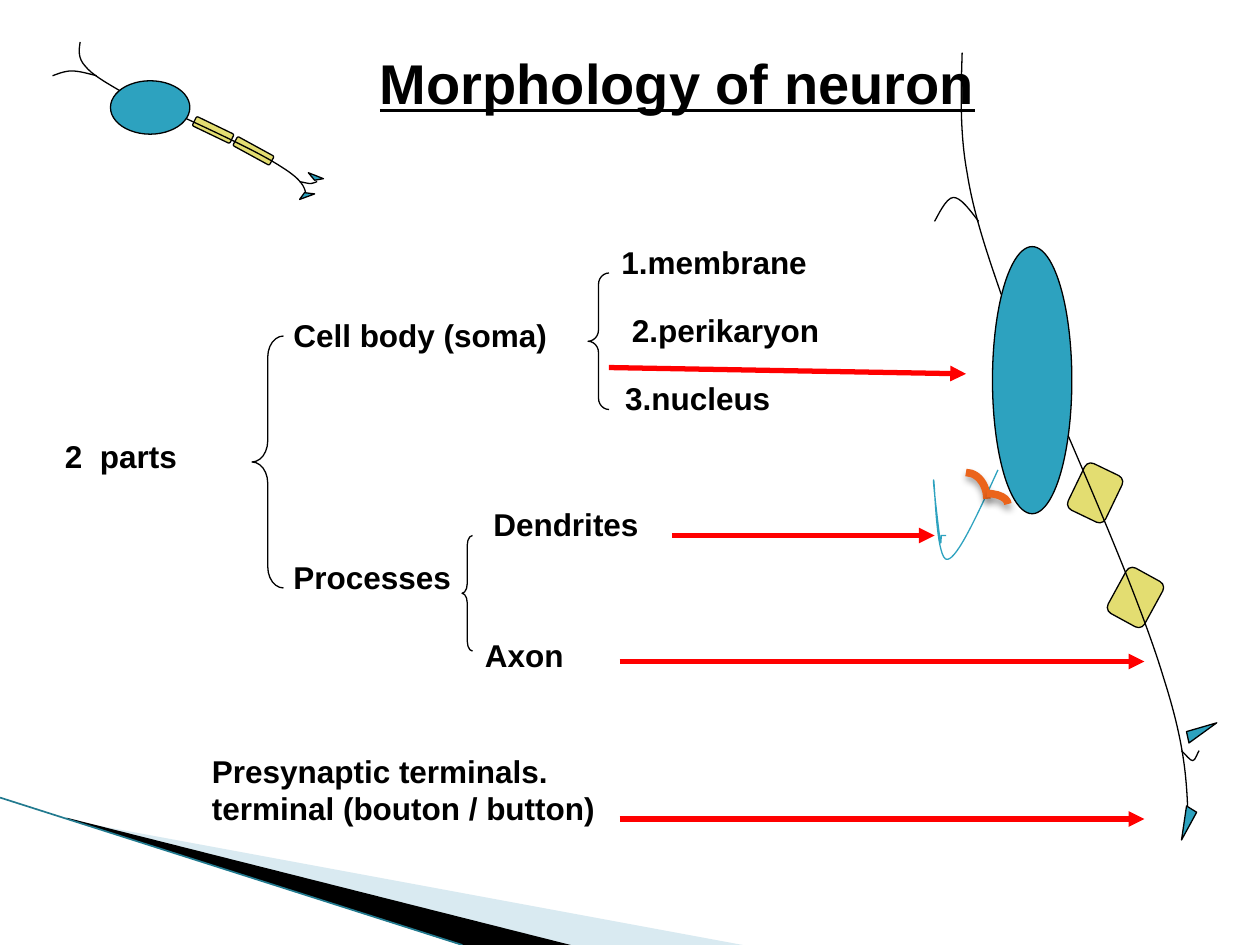
from dataclasses import dataclass

import pptx
import pptx.dml.color
import pptx.enum.shapes
import pptx.enum.text
import pptx.oxml
import pptx.oxml.ns
import pptx.util

COLUMNS, ROWS = 100, 75
CELL = pptx.util.Inches(0.1)
BLACK, RED, TEAL, YELLOW, ORANGE = "000000", "FF0000", "2DA2BF", "E3DD71", "EB641B"
SHAPE = pptx.enum.shapes.MSO_SHAPE
Point = tuple[float, float]


@dataclass
class Label:
    wording: str
    col: float
    row: float
    cols: float
    rows: float = 4
    size: int = 18
    underline: bool = False


@dataclass
class Brace:
    col: float
    row: float
    cols: float
    rows: float
    curl: float


@dataclass
class Arrow:
    start: Point
    end: Point


@dataclass
class Wedge:
    corners: list[Point]
    frame: tuple[float, float, float, float]
    color: str
    alpha: int


@dataclass
class Neuron:
    col: float
    row: float
    stretch: float
    upper_bouton: list[Point]

    def place(self, point: Point) -> Point:
        return self.col + point[0], self.row + point[1] * self.stretch


WEDGES = [
    Wedge([(5.5, 65.1), (59.5, 75.1), (45.6, 75.1), (5.5, 65)], (7.8, 54.7, 41.6, 15.8), "A0CBDC", 40),
    Wedge([(5.3, 64.9), (45.7, 75.1), (37.2, 75.2), (5.4, 65)], (-0.6, 63.3, 41.6, 9.2), BLACK, 100),
]
LABELS = [
    Label("Morphology of neuron", 29.17, 3.37, 50.8, 6.4, 32, True),
    Label("2  parts", 4.17, 34.2, 11),
    Label("Cell body (soma)", 22.3, 24.6, 22.6),
    Label("Processes", 22.3, 43.8, 14.6),
    Label("Dendrites", 38.17, 39.6, 13.9),
    Label("Axon", 37.5, 50, 8.4),
    Label("1.membrane", 48.33, 18.8, 17.6),
    Label("2.perikaryon", 49.17, 24.2, 17.5),
    Label("3.nucleus", 48.63, 29.6, 13.8),
    Label("Presynaptic terminals.\nterminal (bouton / button)", 15.83, 59.17, 32.8, 7),
]
BRACES = [
    Brace(20, 26.67, 2.5, 20, 0.67),
    Brace(36.67, 42.5, 0.83, 9.17, 0.92),
    Brace(46.67, 21.67, 1.67, 10.83, 0.54),
]
ARROWS = [
    Arrow((48.33, 29.17), (76.67, 29.67)),
    Arrow((53.33, 42.5), (74.17, 42.5)),
    Arrow((49.17, 52.5), (90.83, 52.5)),
    Arrow((49.17, 65), (90.83, 65)),
]
NEURONS = [
    Neuron(74.17, 4.17, 1, [(20.2, 54.8), (22.4, 53.2), (20, 53.9)]),
    Neuron(4.17, 3.33, 0.2, [(20.8, 54.9), (21.5, 54.3), (20.3, 51.9)]),
]
SHEATHS = [(11.1, 32.9, 25.7), (14.3, 41.2, 28.7)]
FIBRES = [
    [(5.3, 19.2), (4.2, 16), (3.1, 12.8), (2.6, 9.6), (2, 6.4), (2.1, 3.2), (2.2, 0)],
    [(3.5, 13.4), (2.8, 12.5), (2.1, 11.5), (1.5, 11.5), (0.9, 11.5), (0.2, 13.1), (0, 13.4)],
    [(10.6, 30.4), (13.7, 37.6), (16.7, 44.7), (18.2, 49.7), (19.8, 54.7), (20, 57.5), (20.1, 60.3)],
    [(19.6, 55.4), (20, 55.8), (20.3, 56.2), (20.5, 56.2), (20.7, 56.2), (20.9, 55.5), (21, 55.4)],
]
LOWER_BOUTON = [(20, 59.8), (19.6, 62.5), (20.8, 60.3)]
DENDRITE_LOOP = [
    (79.2, 37.3), (77.6, 40.8), (76, 44.3), (75.2, 44.4), (74.3, 44.6), (74.2, 38.4),
    (74.1, 38.1), (74, 37.9), (74.5, 42.1), (74.6, 42.8), (74.7, 43.6), (74.7, 42.5),
    (74.7, 42.5), (75.1, 42.5),
]


def grid(count: float) -> pptx.util.Emu:
    return pptx.util.Emu(round(count * CELL))


def rgb(value: str) -> pptx.dml.color.RGBColor:
    return pptx.dml.color.RGBColor.from_string(value)


def qn(tag: str) -> str:
    return pptx.oxml.ns.qn(tag)


def element(xml: str):
    return pptx.oxml.parse_xml(xml.replace(" ", f" {pptx.oxml.ns.nsdecls('a')} ", 1))


def paint(shape, fill: str | None, line: str | None, width: float = 0.75) -> None:
    shape.shadow.inherit = False
    if fill:
        shape.fill.solid()
        shape.fill.fore_color.rgb = rgb(fill)
    else:
        shape.fill.background()
    if line:
        shape.line.color.rgb = rgb(line)
        shape.line.width = pptx.util.Pt(width)
    else:
        shape.line.fill.background()


def add_preset(slide, kind, col: float, row: float, cols: float, rows: float):
    return slide.shapes.add_shape(kind, grid(col), grid(row), grid(cols), grid(rows))


def add_outline(slide, points: list[Point], closed: bool = True):
    corners = [(grid(col), grid(row)) for col, row in points]
    builder = slide.shapes.build_freeform(*corners[0])
    builder.add_line_segments(corners[1:], close=closed)
    return builder.convert_to_shape()


def add_curve(slide, knots: list[Point], color: str) -> None:
    curve = add_outline(slide, knots, False)
    paint(curve, None, color)
    segments = list(curve._element.iter(qn("a:lnTo")))
    for first in range(0, len(segments) - 2, 3):
        bend = element("<a:cubicBezTo />")
        segments[first].addprevious(bend)
        for segment in segments[first:first + 3]:
            bend.append(segment[0])
            segment.getparent().remove(segment)


def add_line(slide, start: Point, end: Point, color: str, width: float):
    line = slide.shapes.add_connector(
        pptx.enum.shapes.MSO_CONNECTOR.STRAIGHT, *map(grid, start), *map(grid, end))
    line.line.color.rgb = rgb(color)
    line.line.width = pptx.util.Pt(width)
    line._element.spPr.append(element("<a:effectLst />"))
    return line


def add_arrow(slide, arrow: Arrow) -> None:
    line = add_line(slide, arrow.start, arrow.end, RED, 3)
    line.line._get_or_add_ln().append(element('<a:tailEnd type="triangle"/>'))


def add_wedge(slide, wedge: Wedge) -> None:
    shape = add_outline(slide, wedge.corners)
    paint(shape, wedge.color, None)
    tint = shape._element.spPr.find(".//" + qn("a:srgbClr"))
    tint.append(element(f'<a:alpha val="{wedge.alpha * 1000}"/>'))
    left, top, width, height = map(grid, wedge.frame)
    for point in shape._element.iter(qn("a:pt")):
        point.set("x", str(int(point.get("x")) + shape.left - left))
        point.set("y", str(int(point.get("y")) + shape.top - top))
    outline = shape._element.spPr.find(".//" + qn("a:path"))
    outline.set("w", str(width))
    outline.set("h", str(height))
    shape.left, shape.top, shape.width, shape.height = left, top, width, height


def add_label(slide, label: Label) -> None:
    box = slide.shapes.add_textbox(*map(grid, (label.col, label.row, label.cols, label.rows)))
    frame = box.text_frame
    frame.word_wrap = False
    frame.auto_size = pptx.enum.text.MSO_AUTO_SIZE.SHAPE_TO_FIT_TEXT
    frame.text = label.wording
    for paragraph in frame.paragraphs:
        font = paragraph.font
        font.name, font.size, font.bold = "Arial", pptx.util.Pt(label.size), True
        font.underline = label.underline
        font.color.rgb = rgb(BLACK)


def add_brace(slide, brace: Brace) -> None:
    shape = add_preset(slide, SHAPE.LEFT_BRACE, brace.col, brace.row, brace.cols, brace.rows)
    shape.adjustments[0] = brace.curl
    paint(shape, None, BLACK)


def add_neuron(slide, neuron: Neuron) -> None:
    for col, row, angle in SHEATHS:
        sheath = add_preset(slide, SHAPE.ROUNDED_RECTANGLE, *neuron.place((col, row)), 3.3, 4.1 * neuron.stretch)
        sheath.rotation = angle
        paint(sheath, YELLOW, BLACK)
    soma = add_preset(slide, SHAPE.OVAL, *neuron.place((4.6, 15.4)), 6.3, 21.2 * neuron.stretch)
    paint(soma, TEAL, BLACK)
    for fibre in FIBRES:
        add_curve(slide, [neuron.place(knot) for knot in fibre], BLACK)
    for bouton in (LOWER_BOUTON, neuron.upper_bouton):
        paint(add_outline(slide, [neuron.place(corner) for corner in bouton]), TEAL, BLACK)


def add_dendrite(slide) -> None:
    add_curve(slide, DENDRITE_LOOP, TEAL)
    for col, row, rows in ((75, 37.5, 4.17), (76.67, 39.17, 1.67)):
        arc = add_preset(slide, SHAPE.ARC, col, row, 3.33, rows)
        paint(arc, None, ORANGE, 4.33)
        arc._element.spPr.find(qn("a:effectLst")).append(element(
            '<a:outerShdw blurRad="50800" dist="38100" dir="5400000" rotWithShape="0">'
            '<a:srgbClr val="000000"><a:alpha val="35000"/></a:srgbClr></a:outerShdw>'))


def main() -> None:
    deck = pptx.Presentation()
    deck.slide_width, deck.slide_height = grid(COLUMNS), grid(ROWS)
    slide = deck.slides.add_slide(deck.slide_layouts[6])
    for wedge in WEDGES:
        add_wedge(slide, wedge)
    add_line(slide, (0, 63.3), (36.7, ROWS), "227A8F", 0.95)
    for draw, parts in ((add_label, LABELS), (add_brace, BRACES), (add_arrow, ARROWS), (add_neuron, NEURONS)):
        for part in parts:
            draw(slide, part)
    add_dendrite(slide)
    deck.save("out.pptx")


if __name__ == "__main__":
    main()
